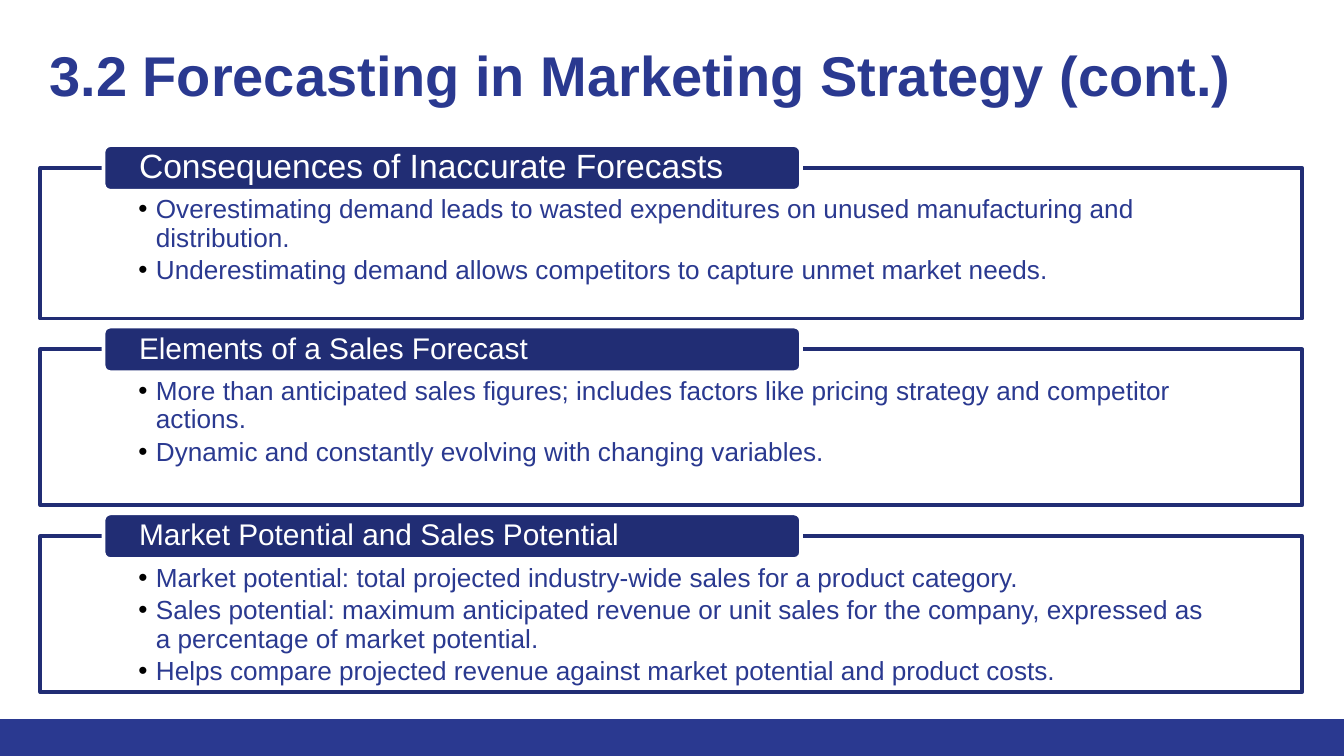
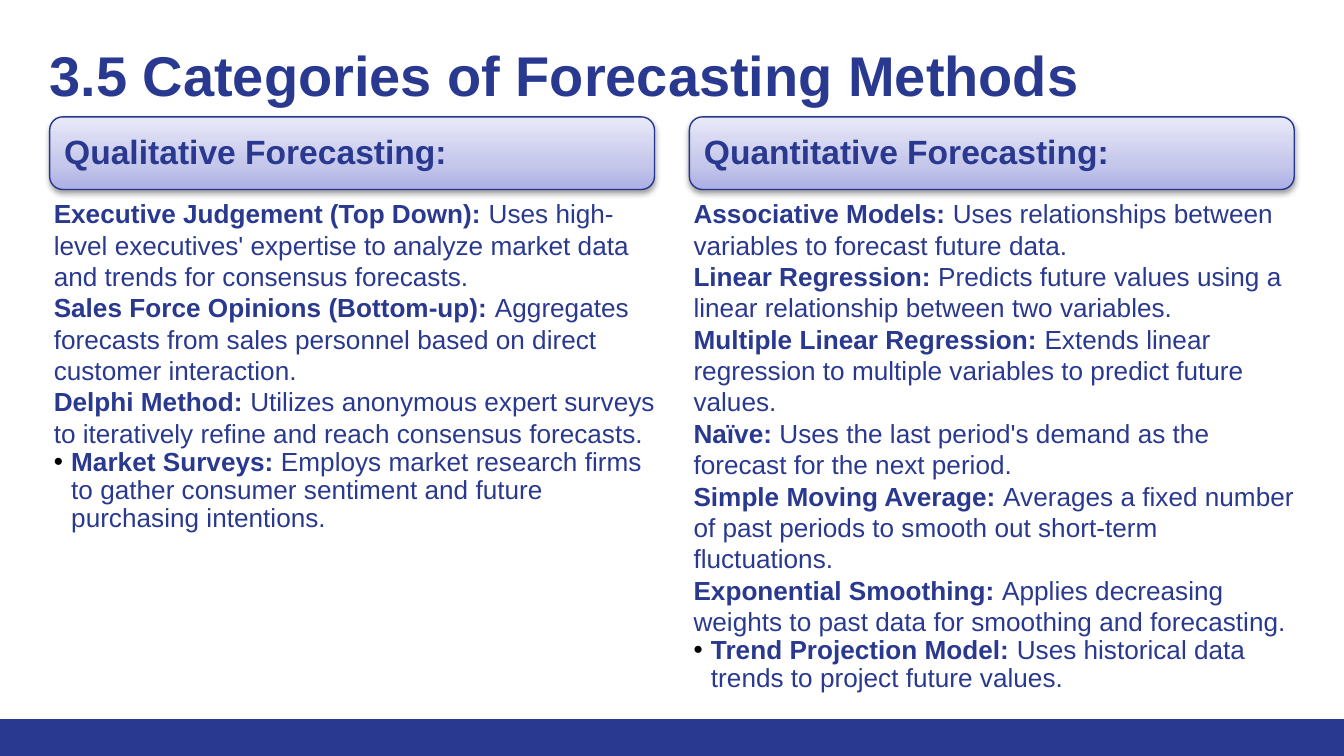
import copy

import pptx
import pptx.util
from pptx.dml.color import RGBColor
from pptx.enum.shapes import MSO_SHAPE
from pptx.enum.text import MSO_ANCHOR
from pptx.oxml.ns import qn
from pptx.oxml.xmlchemy import OxmlElement
from pptx.util import Inches

BLUE = RGBColor(0x2A, 0x39, 0x90)
NAVY = RGBColor(0x21, 0x2D, 0x74)
EDGE = RGBColor(0x27, 0x36, 0x8F)
WHITE = RGBColor(0xFF, 0xFF, 0xFF)
FADE = [(0, RGBColor(0xAB, 0xAF, 0xE4)),
        (0.35, RGBColor(0xC5, 0xC7, 0xEB)),
        (1, RGBColor(0xE8, 0xE9, 0xF8))]
FONT = "Arial"
WIDE = 10
HIGH = WIDE * 9 / 16
FOOT = 5.35

# Heading, heading size, box height, points
TOPICS = [
    ("Consequences of Inaccurate Forecasts", 18, 1.12, [
        "Overestimating demand leads to wasted expenditures on unused manufacturing and distribution.",
        "Underestimating demand allows competitors to capture unmet market needs."]),
    ("Elements of a Sales Forecast", 16, 1.16, [
        "More than anticipated sales figures; includes factors like pricing strategy and competitor actions.",
        "Dynamic and constantly evolving with changing variables."]),
    ("Market Potential and Sales Potential", 16, 1.16, [
        "Market potential: total projected industry-wide sales for a product category.",
        "Sales potential: maximum anticipated revenue or unit sales for the company, "
        "expressed as a percentage of market potential.",
        "Helps compare projected revenue against market potential and product costs."]),
]

# Heading, text height, (method, meaning) pairs
METHODS = [
    ("Qualitative Forecasting:", 2.65, [
        ("Executive Judgement (Top Down):",
         "Uses high-level executives' expertise to analyze market data and trends for consensus forecasts."),
        ("Sales Force Opinions (Bottom-up):",
         "Aggregates forecasts from sales personnel based on direct customer interaction."),
        ("Delphi Method:",
         "Utilizes anonymous expert surveys to iteratively refine and reach consensus forecasts."),
        ("Market Surveys:",
         "Employs market research firms to gather consumer sentiment and future purchasing intentions.")]),
    ("Quantitative Forecasting:", 3.74, [
        ("Associative Models:",
         "Uses relationships between variables to forecast future data."),
        ("Linear Regression:",
         "Predicts future values using a linear relationship between two variables."),
        ("Multiple Linear Regression:",
         "Extends linear regression to multiple variables to predict future values."),
        ("Naïve:",
         "Uses the last period's demand as the forecast for the next period."),
        ("Simple Moving Average:",
         "Averages a fixed number of past periods to smooth out short-term fluctuations."),
        ("Exponential Smoothing:",
         "Applies decreasing weights to past data for smoothing and forecasting."),
        ("Trend Projection Model:",
         "Uses historical data trends to project future values.")]),
]


def dot(para):
    """Give a paragraph a black bullet with a hanging indent."""
    props = para._p.get_or_add_pPr()
    props.set("marL", str(Inches(0.13)))
    props.set("indent", str(-Inches(0.13)))
    tint = OxmlElement("a:buClr")
    rgb = OxmlElement("a:srgbClr")
    rgb.set("val", "000000")
    tint.append(rgb)
    face = OxmlElement("a:buFont")
    face.set("typeface", FONT)
    mark = OxmlElement("a:buChar")
    mark.set("char", "•")
    props.extend([tint, face, mark])


def write(shape, runs, first=False, size=14, color=BLUE, space=1.0, after=0,
          bullet=False, insets=None, anchor=MSO_ANCHOR.TOP):
    """Add one paragraph of (text, bold) runs; first sets up the frame."""
    frame = shape.text_frame
    if first:
        frame.word_wrap = True
        frame.vertical_anchor = anchor
        (frame.margin_left, frame.margin_top,
         frame.margin_right, frame.margin_bottom) = map(Inches, insets)
        para = frame.paragraphs[0]
    else:
        para = frame.add_paragraph()
    para.alignment = pptx.enum.text.PP_ALIGN.LEFT
    para.line_spacing = space
    para.space_after = pptx.util.Pt(after)
    if bullet:
        dot(para)
    for text, bold in runs:
        run = para.add_run()
        run.text = text
        run.font.name = FONT
        run.font.size = pptx.util.Pt(size)
        run.font.bold = bold
        run.font.color.rgb = color


def block(slide, kind, box, fill=None, line=None, width=1, bend=None):
    shape = slide.shapes.add_shape(kind, *map(Inches, box))
    shape.shadow.inherit = False
    if fill is None:
        shape.fill.background()
    else:
        shape.fill.solid()
        shape.fill.fore_color.rgb = fill
    if line is None:
        shape.line.fill.background()
    else:
        shape.line.color.rgb = line
        shape.line.width = pptx.util.Pt(width)
    if bend is not None:
        shape.adjustments[0] = bend
    return shape


def fade(shape):
    """Fill from the bottom up with the three FADE stops."""
    shape.fill.gradient()
    stops = shape._element.spPr.find(".//" + qn("a:gsLst"))
    stops.insert(1, copy.deepcopy(stops[0]))
    for stop, (place, color) in zip(shape.fill.gradient_stops, FADE):
        stop.position = place
        stop.color.rgb = color
    shape.fill.gradient_angle = 90


def shade(shape):
    """Cast a soft shadow straight down."""
    cast = OxmlElement("a:outerShdw")
    for key, val in (("blurRad", pptx.util.Pt(3.1)), ("dist", pptx.util.Pt(1.6)),
                     ("dir", 90 * 60000), ("rotWithShape", 0)):
        cast.set(key, str(int(val)))
    rgb = OxmlElement("a:srgbClr")
    rgb.set("val", "000000")
    alpha = OxmlElement("a:alpha")
    alpha.set("val", "38000")
    rgb.append(alpha)
    cast.append(rgb)
    shape._element.spPr.find(qn("a:effectLst")).append(cast)


def start(deck, title):
    """Add a slide with the foot band and the title."""
    slide = deck.slides.add_slide(deck.slide_layouts[6])
    block(slide, MSO_SHAPE.RECTANGLE, (0, FOOT, WIDE, HIGH - FOOT), fill=BLUE)
    head = slide.shapes.add_textbox(*map(Inches, (0.27, 0.2, 9.39, 0.89)))
    write(head, [(title, True)], first=True, size=30, insets=(0.1,) * 4)
    return slide


def topics(deck):
    slide = start(deck, "3.2 Forecasting in Marketing Strategy (cont.)")
    top, lip, gap = 1.08, 0.17, 0.06
    for name, size, high, points in TOPICS:
        box = block(slide, MSO_SHAPE.RECTANGLE, (0.3, top + lip, 9.39, high),
                    fill=WHITE, line=NAVY, width=2)
        for i, point in enumerate(points):
            write(box, [(point, False)], first=i == 0, space=0.9, after=2.4,
                  bullet=True, insets=(0.73, 0.21, 0.73, 0.11))
        tab = block(slide, MSO_SHAPE.ROUNDED_RECTANGLE, (0.77, top, 5.19, 0.34),
                    fill=NAVY, line=WHITE, width=2, bend=0.15)
        write(tab, [(name, False)], first=True, size=size, color=WHITE, space=0.9,
              insets=(0.25, 0.01, 0.25, 0.01), anchor=MSO_ANCHOR.MIDDLE)
        top += lip + high + gap


def methods(deck):
    slide = start(deck, "3.5 Categories of Forecasting Methods")
    for col, (name, high, pairs) in enumerate(METHODS):
        left = 0.37 + col * 4.76
        head = block(slide, MSO_SHAPE.ROUNDED_RECTANGLE, (left, 0.87, 4.5, 0.54),
                     line=EDGE, width=0.75, bend=0.18)
        fade(head)
        shade(head)
        write(head, [(name, True)], first=True, size=18, space=0.9,
              insets=(0.08,) * 4, anchor=MSO_ANCHOR.MIDDLE)
        body = block(slide, MSO_SHAPE.RECTANGLE, (left - 0.11, 1.45, 4.71, high))
        for i, (term, note) in enumerate(pairs):
            last = i == len(pairs) - 1
            write(body, [(term + " ", True), (note, False)], first=i == 0,
                  space=0.9 if last else 1.0, bullet=last,
                  insets=(0.14, 0.02, 0.09, 0.02))


def main():
    deck = pptx.Presentation()
    deck.slide_width, deck.slide_height = Inches(WIDE), Inches(HIGH)
    topics(deck)
    methods(deck)
    deck.save("out.pptx")


if __name__ == "__main__":
    main()
